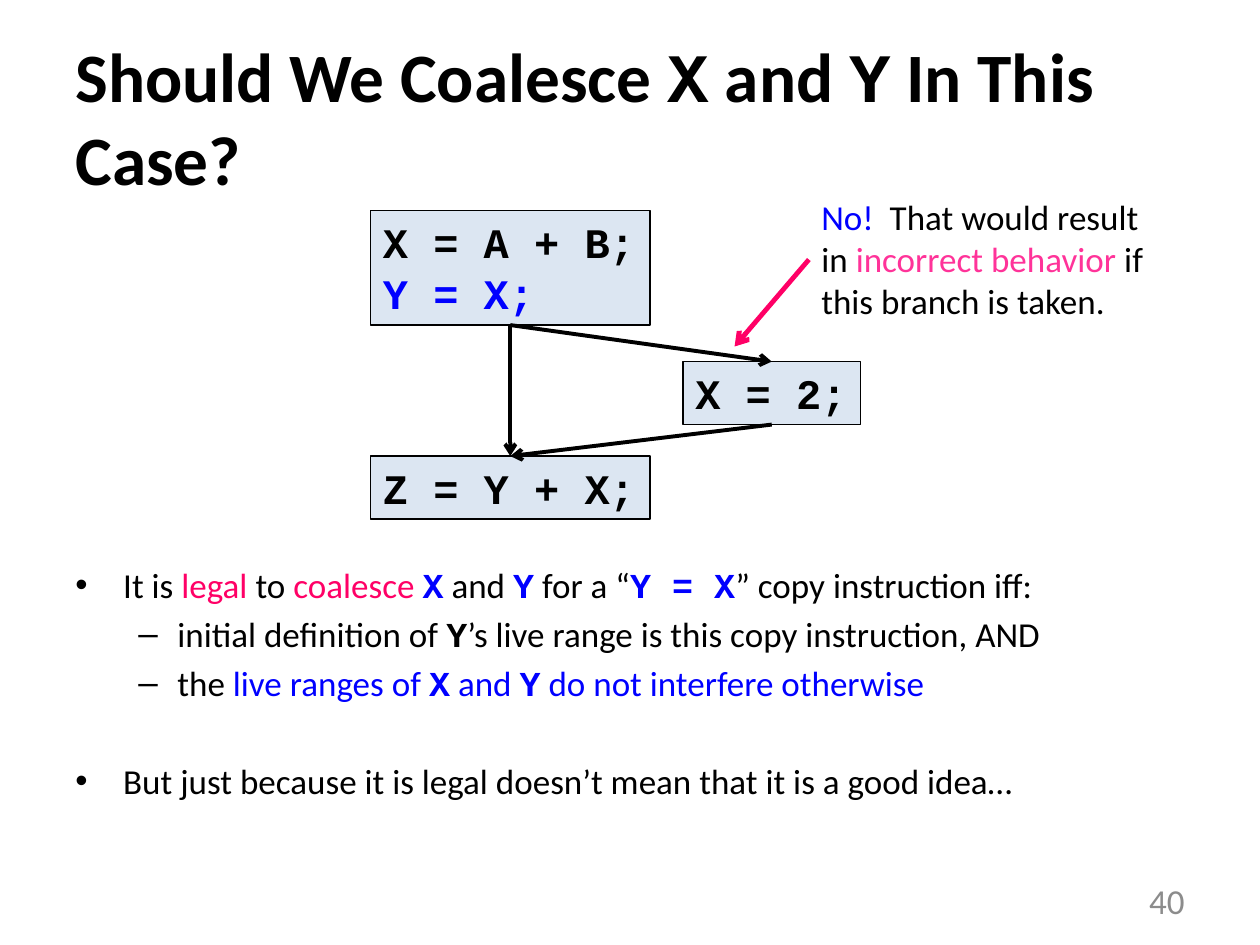
from lxml import etree
from pptx import Presentation, util as u
from pptx.dml.color import RGBColor
from pptx.enum import shapes, text
from pptx.oxml.ns import qn

PX = 9144
BLACK, BLUE, PINK, ROSE = "000000", "0000FF", "FF0066", "FF3399"
BOX_FILL, GREY = "DCE6F2", "8C8C8C"
BODY, CODE = "Calibri", "Courier New"


def px(n):
    """Turn px (100 to the inch) into EMU."""
    return u.Emu(int(n * PX))


def color(value):
    """Turn a hex string into a colour."""
    return RGBColor.from_string(value)


def add_run(p, words, size, c=BLACK, font=BODY, bold=False):
    """Add one formatted run to a paragraph."""
    r = p.add_run()
    r.text = words
    r.font.size, r.font.name, r.font.bold = u.Pt(size), font, bold
    r.font.color.rgb = color(c)


def add_text(s, box, anchor=text.MSO_ANCHOR.TOP):
    """Add an empty wrapping text box and return its frame."""
    tf = s.shapes.add_textbox(*map(px, box)).text_frame
    tf.word_wrap, tf.vertical_anchor = True, anchor
    return tf


def add_title(s, box):
    """Write the title with variable names in the code font."""
    p = add_text(s, box, text.MSO_ANCHOR.MIDDLE).paragraphs[0]
    for words, font in (("Should We Coalesce ", BODY), ("X", CODE), (" and ", BODY),
                        ("Y", CODE), (" In This Case?", BODY)):
        add_run(p, words, 39.6, font=font, bold=True)


def add_code(s, box, lines):
    """Draw a code block from (words, colour) lines."""
    sp = s.shapes.add_shape(shapes.MSO_SHAPE.RECTANGLE, *map(px, box))
    sp.shadow.inherit = False
    sp.fill.solid()
    sp.fill.fore_color.rgb = color(BOX_FILL)
    sp.line.color.rgb, sp.line.width = color(BLACK), u.Pt(0.75)
    tf = sp.text_frame
    tf.word_wrap, tf.vertical_anchor = False, text.MSO_ANCHOR.TOP
    for i, (words, c) in enumerate(lines):
        p = tf.add_paragraph() if i else tf.paragraphs[0]
        p.alignment = text.PP_ALIGN.LEFT
        add_run(p, words, 24, c, CODE, True)
    return sp


def add_arrow(s, start, end, c=BLACK, width=2.25):
    """Draw a straight line with an open arrowhead at its end."""
    cx = s.shapes.add_connector(shapes.MSO_CONNECTOR.STRAIGHT, *map(px, start + end))
    cx.line.color.rgb, cx.line.width = color(c), u.Pt(width)
    etree.SubElement(cx.line._get_or_add_ln(), qn("a:tailEnd"), type="arrow")
    etree.SubElement(cx._element.spPr, qn("a:effectLst"))
    return cx


def add_flow(s, box):
    """Draw the three code blocks and the branches that join them."""
    x, y, w, h = box
    first = add_code(s, (x, y, 222, 91), [("X = A + B;", BLACK), ("Y = X;", BLUE)])
    branch = add_code(s, (x + w - 141, y + 120, 141, 50), [("X = 2;", BLACK)])
    last = add_code(s, (x, y + h - 50, 222, 50), [("Z = Y + X;", BLACK)])
    for a, b in ((first, branch), (first, last), (branch, last)):
        cx = add_arrow(s, (x, y), (x + w, y + h))
        cx.begin_connect(a, 2)
        cx.end_connect(b, 0)


def add_callout(s, box):
    """Write the answer and point from it to the branch."""
    x, y, w, h = box
    p = add_text(s, box).paragraphs[0]
    for words, c in (("No!", BLUE), ("  That would result in ", BLACK),
                     ("incorrect behavior", ROSE), (" if this branch is taken.", BLACK)):
        add_run(p, words, 20, c)
    add_arrow(s, (x, y + 56), (x - 59, y + 125), PINK, 2.75)


def add_bullets(s, box):
    """Write the two-level list of rules."""
    levels = {0: ("•", 38, -38), 1: ("–", 81, -31)}
    code = (CODE, True)
    items = [
        (0, 4, [("It is ",), ("legal", PINK), (" to ",), ("coalesce ", PINK),
                ("X", BLUE, *code), (" and ",), ("Y", BLUE, *code), (" for a “",),
                ("Y = X", BLUE, *code), ("” copy instruction iff:",)]),
        (1, 4, [("initial definition of ",), ("Y", BLACK, *code),
                ("’s live range is this copy instruction, AND",)]),
        (1, 4, [("the ",), ("live ranges of ", BLUE), ("X", BLUE, *code), (" and ", BLUE),
                ("Y", BLUE, *code), (" do not interfere otherwise", BLUE)]),
        (0, 32, [("But just because it is legal doesn’t mean that it is a good idea…",)]),
    ]
    tf = add_text(s, box)
    for i, (level, gap, runs) in enumerate(items):
        p = tf.add_paragraph() if i else tf.paragraphs[0]
        p.level, p.space_before = level, u.Pt(gap)
        mark, left, hang = levels[level]
        pPr = p._p.get_or_add_pPr()
        pPr.set("marL", str(px(left)))
        pPr.set("indent", str(px(hang)))
        etree.SubElement(pPr, qn("a:buFont"), typeface="Arial")
        etree.SubElement(pPr, qn("a:buChar"), char=mark)
        for words, *style in runs:
            add_run(p, words, 20, *style)


def add_number(s, box):
    """Write the slide number."""
    p = add_text(s, box, text.MSO_ANCHOR.MIDDLE).paragraphs[0]
    p.alignment = text.PP_ALIGN.RIGHT
    add_run(p, "40", 20, GREY)


def main():
    """Build and save the slide."""
    prs = Presentation()
    prs.slide_width, prs.slide_height = px(1000), px(750)
    s = prs.slides.add_slide(prs.slide_layouts[6])
    add_title(s, (50, 30, 900, 125))
    add_bullets(s, (50, 442, 900, 225))
    add_number(s, (717, 695, 233, 40))
    add_flow(s, (294, 167, 389, 245))
    add_callout(s, (642, 150, 292, 111))
    prs.save("out.pptx")


if __name__ == "__main__":
    main()
